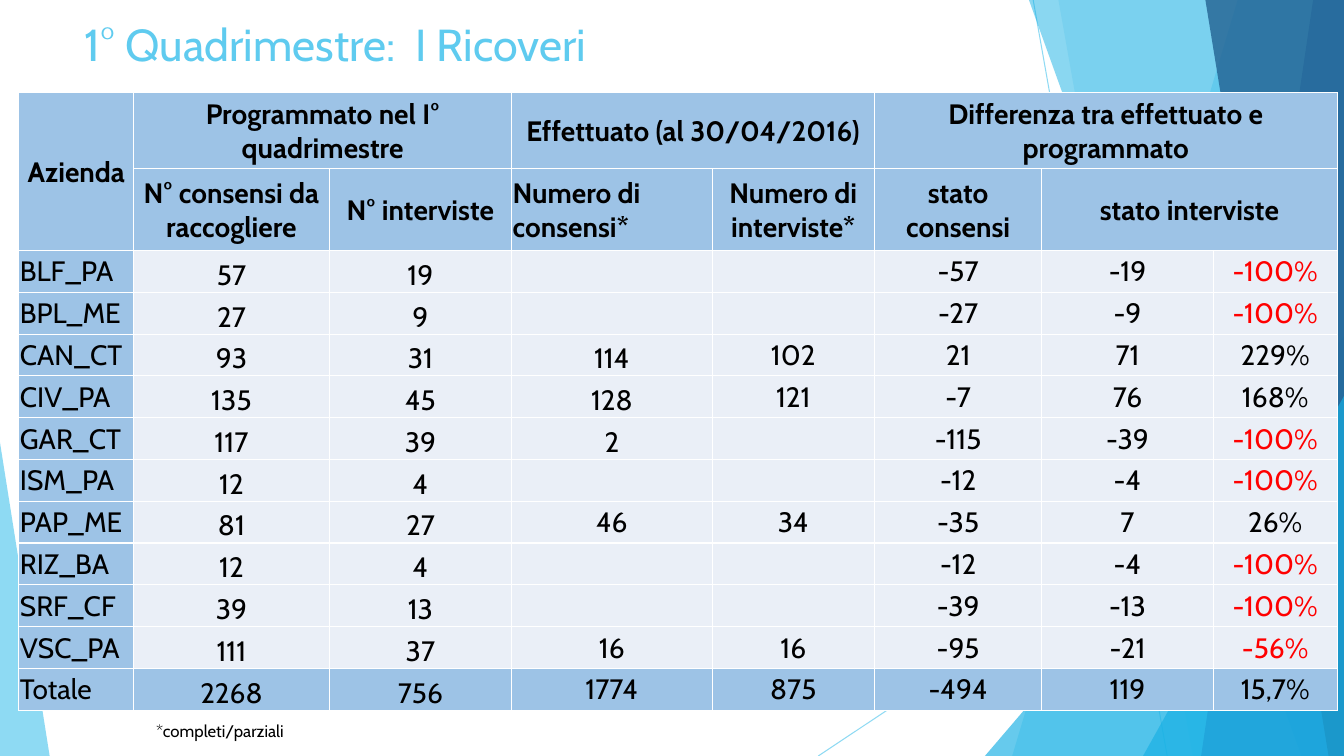
import lxml.etree
import pptx
import pptx.dml.color
import pptx.enum.shapes
import pptx.enum.text
import pptx.oxml
import pptx.oxml.ns
import pptx.util

Pt = pptx.util.Pt
RGBColor = pptx.dml.color.RGBColor
Anchor = pptx.enum.text.MSO_ANCHOR
Align = pptx.enum.text.PP_ALIGN
qn = pptx.oxml.ns.qn

FONT = "Cabin"
WIDTH, HEIGHT = 960, 540
SKY = RGBColor(0x5F, 0xCB, 0xEF)
CYAN = RGBColor(0x17, 0xB0, 0xE4)
BLUE = RGBColor(0x2E, 0x83, 0xC3)
NAVY = RGBColor(0x23, 0x62, 0x92)
HEADER_FILL = RGBColor(0x9D, 0xC3, 0xE6)
BODY_FILL = RGBColor(0xEA, 0xEF, 0xF7)
WHITE = RGBColor(0xFF, 0xFF, 0xFF)
BLACK = RGBColor(0, 0, 0)
RED = RGBColor(0xFF, 0, 0)

RAYS = [((738, 0), (833.75, HEIGHT)), ((WIDTH, 290), (584.5, HEIGHT))]
FACETS = [
    ([(884, 0), (WIDTH, 0), (WIDTH, HEIGHT), (723, HEIGHT)], SKY, 36),
    ([(756, 0), (WIDTH, 0), (WIDTH, HEIGHT), (852, HEIGHT)], SKY, 20),
    ([(703.5, HEIGHT), (WIDTH, 240), (WIDTH, HEIGHT)], CYAN, 66),
    ([(735, 0), (WIDTH, 0), (WIDTH, HEIGHT), (929.5, HEIGHT)], CYAN, 50),
    ([(938, 0), (WIDTH, 0), (WIDTH, HEIGHT), (858, HEIGHT)], BLUE, 70),
    ([(861, 0), (WIDTH, 0), (WIDTH, HEIGHT), (949, HEIGHT)], NAVY, 80),
    ([(816.5, HEIGHT), (WIDTH, 283), (WIDTH, HEIGHT)], CYAN, 66),
    ([(0, HEIGHT), (0, 316), (35.5, HEIGHT)], SKY, 70),
]

COLUMN_WIDTHS = [82, 139.75, 130.25, 143.25, 116, 119.5, 122.5, 88.5]
ROW_HEIGHTS = [54.25, 58.5] + [29.86] * 11
ROWS = [
    ["Azienda", "Programmato nel I° quadrimestre", "", "Effettuato (al 30/04/2016)", "",
     "Differenza tra effettuato e programmato", "", ""],
    ["", "N° consensi da raccogliere", "N° interviste", "Numero di consensi*",
     "Numero di interviste*", "stato consensi", "stato interviste", ""],
    ["BLF_PA", "57", "19", "", "", "-57", "-19", "-100%"],
    ["BPL_ME", "27", "9", "", "", "-27", "-9", "-100%"],
    ["CAN_CT", "93", "31", "114", "102", "21", "71", "229%"],
    ["CIV_PA", "135", "45", "128", "121", "-7", "76", "168%"],
    ["GAR_CT", "117", "39", "2", "", "-115", "-39", "-100%"],
    ["ISM_PA", "12", "4", "", "", "-12", "-4", "-100%"],
    ["PAP_ME", "81", "27", "46", "34", "-35", "7", "26%"],
    ["RIZ_BA", "12", "4", "", "", "-12", "-4", "-100%"],
    ["SRF_CF", "39", "13", "", "", "-39", "-13", "-100%"],
    ["VSC_PA", "111", "37", "16", "16", "-95", "-21", "-56%"],
    ["Totale", "2268", "756", "1774", "875", "-494", "119", "15,7%"],
]
MERGES = [((0, 0), (1, 0)), ((0, 1), (0, 2)), ((0, 3), (0, 4)),
          ((0, 5), (0, 7)), ((1, 6), (1, 7))]
HEADER_ROWS = 2
LAST_LOW_CONSENT_ROW = 6


def set_opacity(fill_parent, percent):
    color = next(fill_parent.iter(qn("a:srgbClr")))
    lxml.etree.SubElement(color, qn("a:alpha"), val=str(percent * 1000))


def format_text(para, size, color, bold=False):
    for span in para.runs:
        span.font.name = FONT
        span.font.size = Pt(size)
        span.font.bold = bold
        span.font.color.rgb = color


def add_background(page, left, top):
    for start, end in RAYS:
        ray = page.shapes.add_connector(
            pptx.enum.shapes.MSO_CONNECTOR.STRAIGHT,
            Pt(left + start[0]), Pt(top + start[1]), Pt(left + end[0]), Pt(top + end[1]))
        ray.line.color.rgb = SKY
        ray.line.width = Pt(0.75)
        properties = ray.line._get_or_add_ln().getparent()
        set_opacity(properties, 70)
        lxml.etree.SubElement(properties, qn("a:effectLst"))
    for corners, color, opacity in FACETS:
        points = [(Pt(left + x), Pt(top + y)) for x, y in corners]
        builder = page.shapes.build_freeform(*points[0])
        builder.add_line_segments(points[1:], close=True)
        facet = builder.convert_to_shape()
        facet.shadow.inherit = False
        facet.fill.solid()
        facet.fill.fore_color.rgb = color
        set_opacity(facet.element.spPr, opacity)
        facet.line.fill.background()


def add_label(page, left, top, width, height, text, size, color, wrap):
    box = page.shapes.add_textbox(Pt(left), Pt(top), Pt(width), Pt(height))
    box.text_frame.word_wrap = wrap
    box.text_frame.text = text
    format_text(box.text_frame.paragraphs[0], size, color)


def add_borders(cell):
    properties = cell._tc.get_or_add_tcPr()
    for side in ("a:lnL", "a:lnR", "a:lnT", "a:lnB"):
        border = lxml.etree.SubElement(properties, qn(side), w=str(Pt(1)))
        fill = lxml.etree.SubElement(border, qn("a:solidFill"))
        lxml.etree.SubElement(fill, qn("a:srgbClr"), val=str(WHITE))


def style_cell(cell, row, column, text):
    header = row < HEADER_ROWS
    add_borders(cell)
    cell.fill.solid()
    shaded = header or column == 0 or row == len(ROWS) - 1
    cell.fill.fore_color.rgb = HEADER_FILL if shaded else BODY_FILL
    cell.margin_left = cell.margin_right = cell.margin_top = Pt(0.75)
    cell.margin_bottom = Pt(0)
    low = not header and (column in (1, 2) or column == 3 and row <= LAST_LOW_CONSENT_ROW)
    cell.vertical_anchor = Anchor.BOTTOM if low else Anchor.MIDDLE
    if not text:
        return
    cell.text_frame.text = text
    para = cell.text_frame.paragraphs[0]
    left_aligned = column == 0 and not header or (row, column) == (1, 3)
    para.alignment = Align.LEFT if left_aligned else Align.CENTER
    negative_share = column == 7 and text.startswith("-")
    format_text(para, 20, RED if negative_share else BLACK, header)


def add_admissions_table(page, left, top):
    frame = page.shapes.add_table(
        len(ROWS), len(COLUMN_WIDTHS), Pt(left), Pt(top),
        Pt(sum(COLUMN_WIDTHS)), Pt(sum(ROW_HEIGHTS)))
    table = frame.table
    for column, width in zip(table.columns, COLUMN_WIDTHS):
        column.width = Pt(width)
    for row, height in zip(table.rows, ROW_HEIGHTS):
        row.height = Pt(height)
    for row, texts in enumerate(ROWS):
        for column, text in enumerate(texts):
            style_cell(table.cell(row, column), row, column, text)
    for first, last in MERGES:
        table.cell(*first).merge(table.cell(*last))


def main():
    deck = pptx.Presentation()
    deck.slide_width = Pt(WIDTH)
    deck.slide_height = Pt(HEIGHT)
    page = deck.slides.add_slide(deck.slide_layouts[6])
    add_background(page, 0, 0)
    add_label(page, 53.25, 8.5, 677, 42.5, "1° Quadrimestre:  I Ricoveri", 32, SKY, True)
    add_admissions_table(page, 13.5, 66.25)
    add_label(page, 104.5, 511, 113, 21.75, "*completi/parziali", 12, BLACK, False)
    deck.save("out.pptx")


if __name__ == "__main__":
    main()
